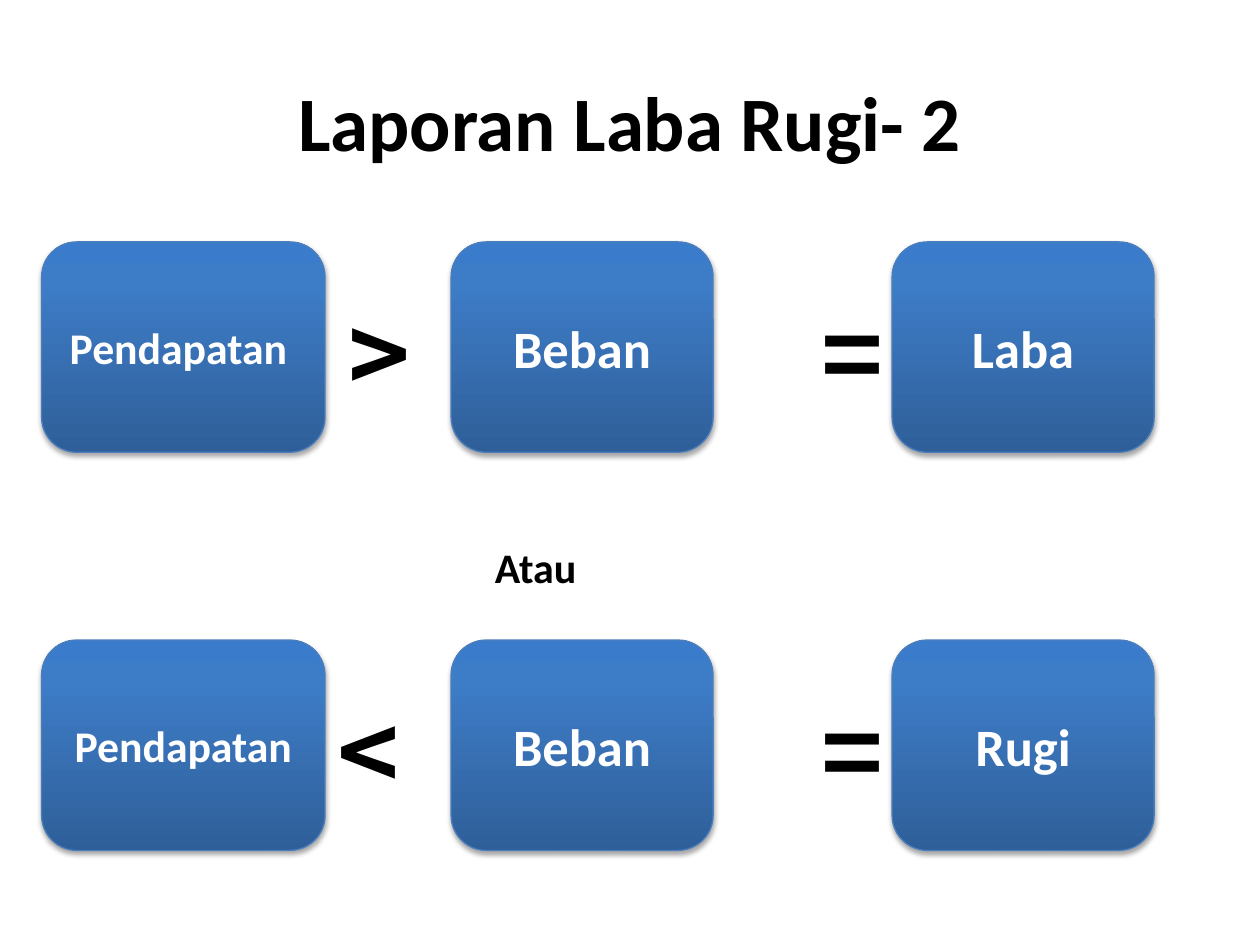
"""Builds the slide comparing revenue with expenses to give profit or loss."""
from lxml import etree
from pptx import Presentation
from pptx.dml.color import RGBColor
from pptx.enum.shapes import MSO_SHAPE
from pptx.enum.text import MSO_ANCHOR, MSO_AUTO_SIZE, PP_ALIGN
from pptx.oxml.ns import qn
from pptx.util import Inches, Pt

ROUNDED = MSO_SHAPE.ROUNDED_RECTANGLE
MIDDLE, TOP = MSO_ANCHOR.MIDDLE, MSO_ANCHOR.TOP
CENTER, LEFT = PP_ALIGN.CENTER, PP_ALIGN.LEFT
GROW = MSO_AUTO_SIZE.SHAPE_TO_FIT_TEXT

COLORS = {"text": "000000", "on_card": "FFFFFF", "card_line": "4B7EBC", "shadow": "000000"}
CARD_GRADIENT = [(0, "2F5F99"), (80, "3D7CC7"), (100, "3A7CCB")]
BODY_FONT, SIGN_FONT = "Calibri", "Noto Sans CJK JP"

TITLE = "Laporan Laba Rugi- 2"
OR_WORD = "Atau"
EQUATIONS = [
    {"cards": ["Pendapatan ", "Beban", "Laba"],
     "comparison": (">", 2.67, 0.6, CENTER, True)},
    {"cards": ["Pendapatan", "Beban", "Rugi"],
     "comparison": ("<", 2.58, 0.62, LEFT, False)},
]
CARD_COLUMNS = [(0.33, 2.25, 25), (3.58, 2.08, 30), (7.08, 2.08, 30)]
EQUALS_LEFT, EQUALS_WIDTH = 6.42, 0.56
FIRST_ROW, ROW_PITCH, CARD_HEIGHT = 1.92, 3.16, 1.67
SIGN_OFFSET, SIGN_HEIGHT = 0.33, 1.11


def write(shape, text, size, font=BODY_FONT, color="text", align=CENTER,
          anchor=TOP, wrap=True, grow=False):
    frame = shape.text_frame
    frame.word_wrap = wrap
    frame.vertical_anchor = anchor
    if grow:
        frame.auto_size = GROW
    paragraph = frame.paragraphs[0]
    paragraph.alignment = align
    run = paragraph.add_run()
    run.text = text
    run.font.name = font
    run.font.size = Pt(size)
    run.font.bold = True
    run.font.color.rgb = RGBColor.from_string(COLORS[color])


def add_label(slide, text, left, top, width, height, size, **text_format):
    label = slide.shapes.add_textbox(*map(Inches, (left, top, width, height)))
    write(label, text, size, grow=True, **text_format)


def add_color(parent, color, opacity=100):
    node = etree.SubElement(parent, qn("a:srgbClr"), val=color)
    if opacity < 100:
        etree.SubElement(node, qn("a:alpha"), val=str(opacity * 1000))


def add_card(slide, text, left, top, width, size):
    card = slide.shapes.add_shape(ROUNDED, *map(Inches, (left, top, width, CARD_HEIGHT)))
    card.fill.gradient()
    card.fill.gradient_angle = 90
    properties = card._element.spPr
    stops = properties.find(".//" + qn("a:gsLst"))
    for stop in list(stops):
        stops.remove(stop)
    for position, color in CARD_GRADIENT:
        add_color(etree.SubElement(stops, qn("a:gs"), pos=str(position * 1000)), color)
    card.line.color.rgb = RGBColor.from_string(COLORS["card_line"])
    card.line.width = Pt(0.75)
    card.shadow.inherit = False
    shadow = etree.SubElement(
        properties.find(qn("a:effectLst")), qn("a:outerShdw"), blurRad=str(Pt(3.1)),
        dist=str(Pt(1.8)), dir="5400000", rotWithShape="0")
    add_color(shadow, COLORS["shadow"], opacity=35)
    write(card, text, size, color="on_card", anchor=MIDDLE)


def add_equation(slide, equation, top):
    for text, (left, width, size) in zip(equation["cards"], CARD_COLUMNS):
        add_card(slide, text, left, top, width, size)
    comparison, left, width, align, wrap = equation["comparison"]
    sign_top = top + SIGN_OFFSET
    add_label(slide, comparison, left, sign_top, width, SIGN_HEIGHT, 60,
              font=SIGN_FONT, align=align, wrap=wrap)
    add_label(slide, "=", EQUALS_LEFT, sign_top, EQUALS_WIDTH, SIGN_HEIGHT, 60,
              font=SIGN_FONT)


def main():
    deck = Presentation()
    deck.slide_width, deck.slide_height = Inches(10), Inches(7.5)
    slide = deck.slides.add_slide(deck.slide_layouts[5])
    title = slide.shapes.title
    title.left, title.top, title.width, title.height = map(Inches, (0.5, 0.33, 9, 1.25))
    write(title, TITLE, 44, anchor=MIDDLE)
    for row, equation in enumerate(EQUATIONS):
        add_equation(slide, equation, FIRST_ROW + row * ROW_PITCH)
    add_label(slide, OR_WORD, 3.83, 4.25, 0.87, 0.5, 24, align=LEFT, wrap=False)
    deck.save("out.pptx")


if __name__ == "__main__":
    main()
